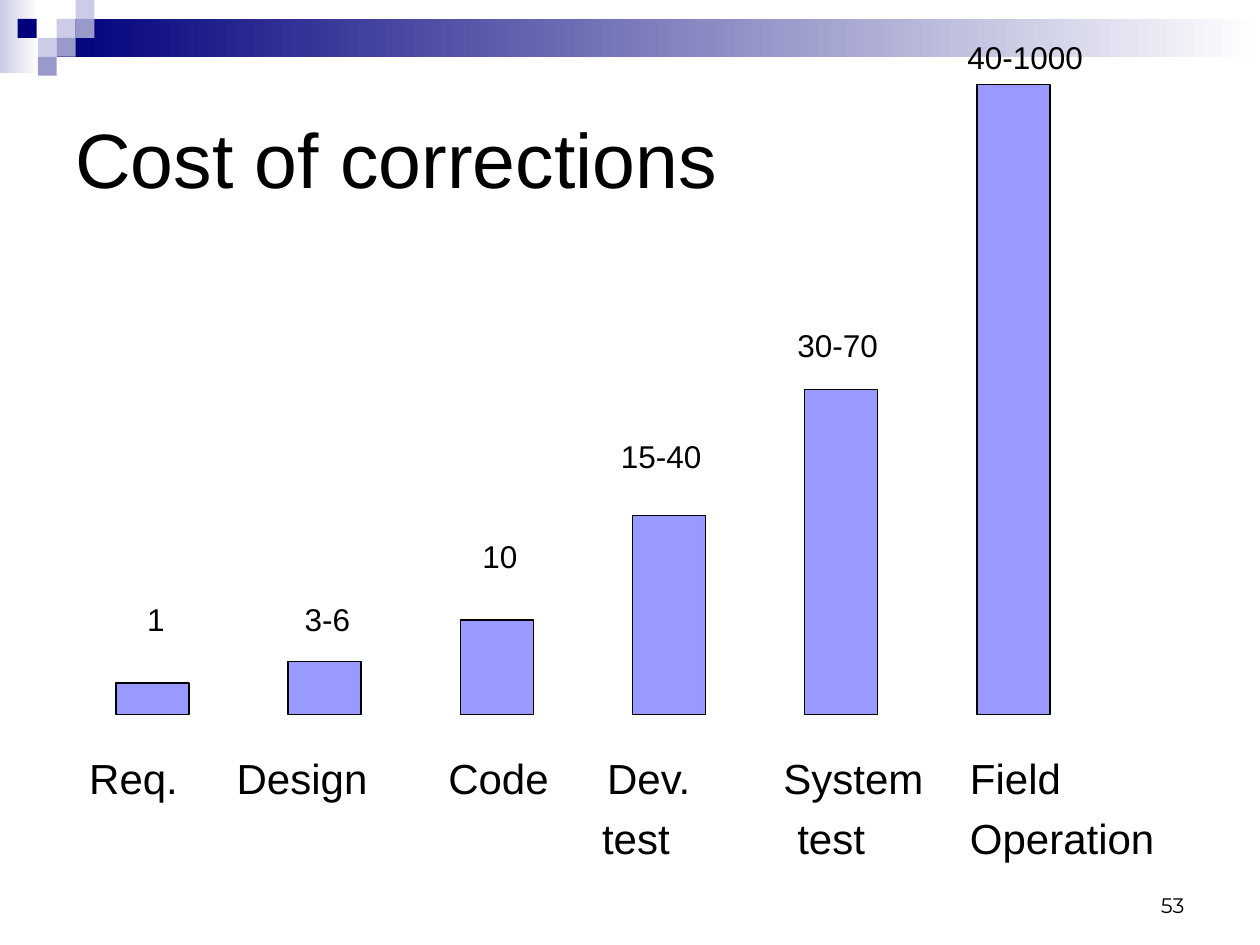
from pptx import Presentation
from pptx.dml.color import RGBColor
from pptx.enum.shapes import MSO_SHAPE as Shape
from pptx.enum.text import MSO_ANCHOR as Anchor, MSO_AUTO_SIZE as AutoSize, PP_ALIGN as Align
from pptx.oxml.xmlchemy import OxmlElement
from pptx.util import Inches, Pt

COLORS = {
    "text": "000000",
    "navy": "00007D",
    "pale": "CCCCE6",
    "mid": "9999CC",
    "bar": "9999FF",
    "white": "FFFFFF",
}

TILE = 0.15
TILES = [  # left, top, colour
    (0.45, 0.15, "pale"),
    (0.6, 0, "pale"),
    (0.6, 0.15, "mid"),
    (0.3, 0.3, "pale"),
    (0.14, 0.15, "navy"),
    (0.45, 0.3, "mid"),
    (0.3, 0.45, "mid"),
]

BASELINE = 5.67
FIRST_BAR, BAR_STEP, BAR_WIDTH = 0.92, 4.1 / 3, 0.58
BARS = [  # bar height, cost, label left, label top, label width
    (0.25, "1", 1.07, 4.71, 0.34),
    (0.42, "3-6", 2.32, 4.71, 0.56),
    (0.75, "10", 3.73, 4.21, 0.48),
    (1.58, "15-40", 4.83, 3.42, 0.84),
    (2.58, "30-70", 6.23, 2.54, 0.84),
    (5, "40-1000", 7.58, 0.25, 1.12),
]

PHASE_LINES = [  # words with their distance from the text edge
    [("Req.", 0.28), ("Design", 1.45), ("Code", 3.13),
     ("Dev.", 4.39), ("System", 5.79), ("Field", 7.27)],
    [("test", 4.35), ("test", 5.9), ("Operation", 7.27)],
]


def color(name):
    return RGBColor.from_string(COLORS[name])


def add_rect(page, left, top, width, height):
    rect = page.shapes.add_shape(
        Shape.RECTANGLE, Inches(left), Inches(top), Inches(width), Inches(height))
    rect.shadow.inherit = False
    rect.line.fill.background()
    return rect


def add_solid(page, left, top, width, height, fill):
    rect = add_rect(page, left, top, width, height)
    rect.fill.solid()
    rect.fill.fore_color.rgb = color(fill)
    return rect


def add_fade(page, left, top, width, height, start):
    """Rectangle that fades from a colour to white, left to right."""
    fill = add_rect(page, left, top, width, height).fill
    fill.gradient()
    fill.gradient_angle = 0
    for stop, name, position in zip(fill.gradient_stops, (start, "white"), (0, 1)):
        stop.color.rgb = color(name)
        stop.position = position


def style(para, size, font="Arial"):
    para.font.size = Pt(size)
    para.font.name = font
    para.font.color.rgb = color("text")


def add_text(page, left, top, width, height, text, size,
             font="Arial", anchor=Anchor.TOP, align=Align.LEFT, wrap=True):
    box = page.shapes.add_textbox(
        Inches(left), Inches(top), Inches(width), Inches(height))
    frame = box.text_frame
    frame.word_wrap = wrap
    frame.auto_size = AutoSize.NONE if wrap else AutoSize.SHAPE_TO_FIT_TEXT
    frame.vertical_anchor = anchor
    frame.text = text
    for para in frame.paragraphs:
        para.alignment = align
        style(para, size, font)
    return frame


def set_tabs(para, positions):
    tabs = OxmlElement("a:tabLst")
    for position in positions:
        tab = OxmlElement("a:tab")
        tab.set("pos", str(Inches(position)))
        tab.set("algn", "l")
        tabs.append(tab)
    properties = para._p.get_or_add_pPr()
    defaults = properties.find(
        "{http://schemas.openxmlformats.org/drawingml/2006/main}defRPr")
    defaults.addprevious(tabs)


def add_header(page):
    add_fade(page, 0, 0, 0.31, 0.58, "pale")
    add_fade(page, 0.45, 0.15, 9.55, 0.3, "navy")
    for left, top, fill in TILES:
        add_solid(page, left, top, TILE, TILE, fill)


def add_phases(page):
    text = "\n".join(
        "".join("\t" + word for word, _ in line) for line in PHASE_LINES)
    frame = add_text(page, 0.33, 5.92, 9, 1, text, 24)
    for para, line in zip(frame.paragraphs, PHASE_LINES):
        para.space_before = Pt(5.5)
        set_tabs(para, [position for _, position in line])


def add_bars(page):
    for index, (height, cost, left, top, width) in enumerate(BARS):
        bar = add_solid(page, FIRST_BAR + index * BAR_STEP, BASELINE - height,
                        BAR_WIDTH, height, "bar")
        bar.line.color.rgb = color("text")
        bar.line.width = Pt(0.75)
        add_text(page, left, top, width, 0.4, cost, 18, wrap=False)


def main():
    deck = Presentation()
    deck.slide_width, deck.slide_height = Inches(10), Inches(7.5)
    page = deck.slides.add_slide(deck.slide_layouts[6])
    add_header(page)
    add_text(page, 7.17, 6.83, 2.33, 0.5, "53", 12, font="Montserrat",
             anchor=Anchor.BOTTOM, align=Align.RIGHT)
    add_text(page, 0.5, 0.5, 9, 1.5, "Cost of corrections", 44, anchor=Anchor.MIDDLE)
    add_phases(page)
    add_bars(page)
    deck.save("out.pptx")


if __name__ == "__main__":
    main()
